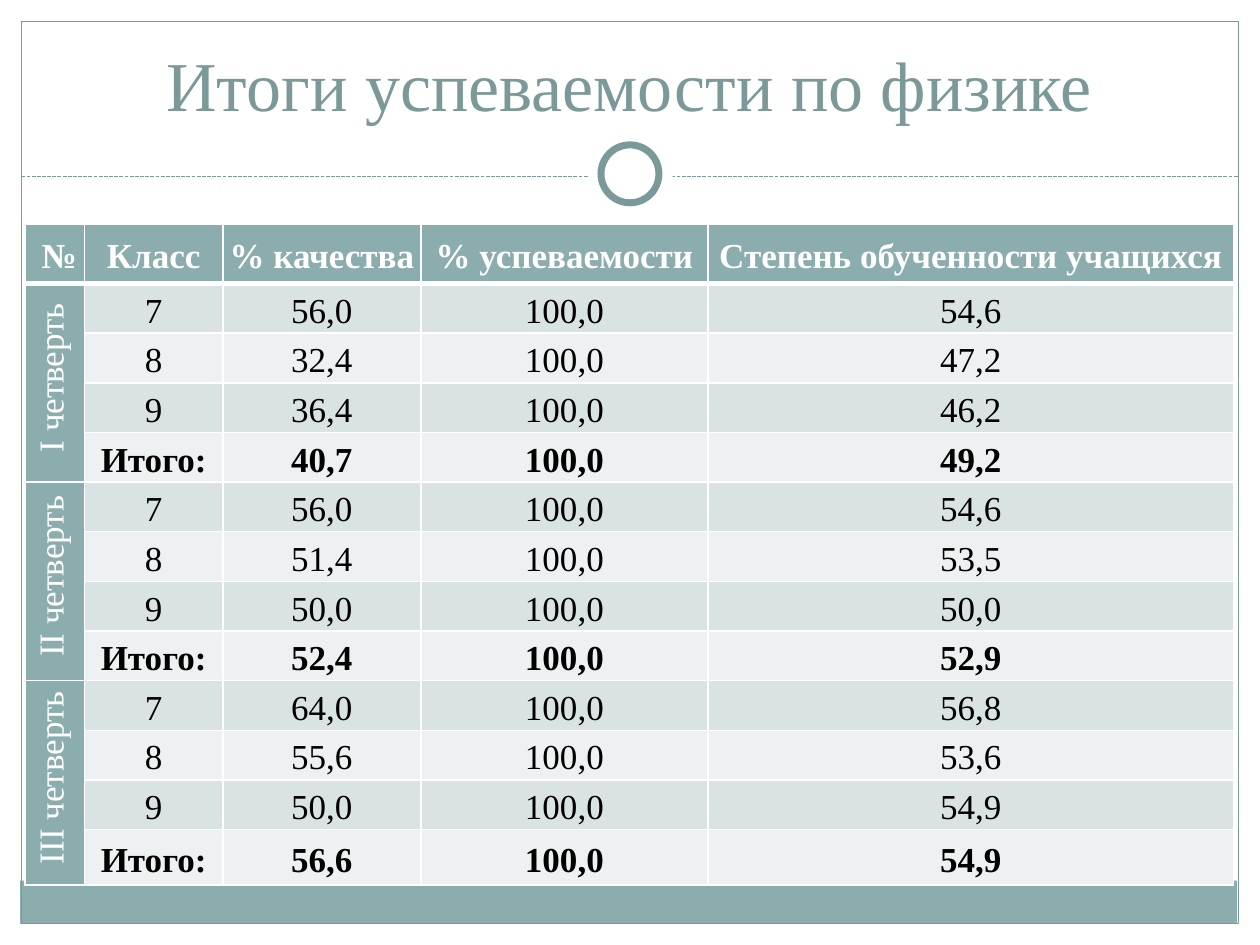
from lxml.etree import SubElement
from pptx import Presentation
from pptx.dml.color import RGBColor
from pptx.enum.dml import MSO_LINE
from pptx.enum.shapes import MSO_CONNECTOR, MSO_SHAPE
from pptx.enum.text import MSO_ANCHOR, PP_ALIGN
from pptx.oxml.ns import qn
from pptx.util import Inches, Pt

WHITE = RGBColor(0xFF, 0xFF, 0xFF)
BLACK = RGBColor(0, 0, 0)
TEAL = RGBColor(0x8C, 0xAD, 0xAE)
DARK_TEAL = RGBColor(0x7C, 0x99, 0x9A)
BANDS = [RGBColor(0xDA, 0xE3, 0xE3), RGBColor(0xEE, 0xF1, 0xF2)]
FONT = "Times New Roman"

TITLE = "Итоги успеваемости по физике"
HEADERS = ["\u00a0№", "Класс", "% качества", "% успеваемости",
           "Степень обученности учащихся"]
CLASSES = ["7", "8", "9", "Итого:"]
SUCCESS = "100,0"
# Quarter: (quality, degree of learning) for each class and the total
QUARTERS = {
    "I четверть": [("56,0", "54,6"), ("32,4", "47,2"), ("36,4", "46,2"), ("40,7", "49,2")],
    "II четверть": [("56,0", "54,6"), ("51,4", "53,5"), ("50,0", "50,0"), ("52,4", "52,9")],
    "III четверть": [("64,0", "56,8"), ("55,6", "53,6"), ("50,0", "54,9"), ("56,6", "54,9")],
}
COLUMN_WIDTHS = [0.47, 1.1, 1.57, 2.28, 4.17]
QUARTER_HEIGHTS = [0.36, 0.38, 0.38, 0.38]
ROW_HEIGHTS = [0.47] + QUARTER_HEIGHTS * len(QUARTERS)
ROW_HEIGHTS[-1] = 0.44


def add_plain_shape(slide, kind, box, fill=None, line=None, line_width=0.75):
    shape = slide.shapes.add_shape(kind, *map(Inches, box))
    shape.shadow.inherit = False
    if fill is None:
        shape.fill.background()
    else:
        shape.fill.solid()
        shape.fill.fore_color.rgb = fill
    if line is None:
        shape.line.fill.background()
    else:
        shape.line.color.rgb = line
        shape.line.width = Pt(line_width)


def add_backdrop(slide):
    rectangle, ellipse = MSO_SHAPE.RECTANGLE, MSO_SHAPE.OVAL
    add_plain_shape(slide, rectangle, (0, 0, 10, 1.52), WHITE)
    for left in (0, 9.83):
        add_plain_shape(slide, rectangle, (left, 0, 0.17, 7.5), WHITE)
    add_plain_shape(slide, rectangle, (0.16, 6.99, 9.66, 0.34), TEAL)
    add_plain_shape(slide, rectangle, (0.17, 0.17, 9.66, 7.16), line=DARK_TEAL)

    divider = slide.shapes.add_connector(
        MSO_CONNECTOR.STRAIGHT, Inches(0.17), Inches(1.4), Inches(9.83), Inches(1.4))
    divider.line.color.rgb = DARK_TEAL
    divider.line.width = Pt(0.75)
    divider.line.dash_style = MSO_LINE.SQUARE_DOT
    SubElement(divider._element.spPr, qn("a:effectLst"))

    add_plain_shape(slide, ellipse, (4.67, 1.05, 0.67, 0.67), WHITE)
    add_plain_shape(slide, ellipse, (4.77, 1.15, 0.46, 0.46), WHITE, DARK_TEAL, 4)


def write_centred(frame, text, size, color, bold=False):
    paragraph = frame.paragraphs[0]
    paragraph.text = text
    paragraph.alignment = PP_ALIGN.CENTER
    font = paragraph.runs[0].font
    font.name, font.size, font.bold = FONT, Pt(size), bold
    font.color.rgb = color
    return paragraph


def set_borders(cell, bottom_width):
    properties = cell._tc.get_or_add_tcPr()
    for side, width in zip("LRTB", (1, 1, 1, bottom_width)):
        border = SubElement(properties, qn(f"a:ln{side}"), w=str(Pt(width)))
        fill = SubElement(border, qn("a:solidFill"))
        SubElement(fill, qn("a:srgbClr"), val=str(WHITE))


def style_cell(cell, fill, margin_x, margin_y, bottom_width=1):
    set_borders(cell, bottom_width)
    cell.fill.solid()
    cell.fill.fore_color.rgb = fill
    cell.vertical_anchor = MSO_ANCHOR.MIDDLE
    cell.margin_left = cell.margin_right = Inches(margin_x)
    cell.margin_top = cell.margin_bottom = Inches(margin_y)


def write_cell(cell, text, color, bold=False):
    paragraph = write_centred(cell.text_frame, text, 20, color, bold)
    paragraph.line_spacing = 1.15
    return paragraph


def add_results(slide):
    place = [Inches(value) for value in (0.2, 1.78, 9.61, 5.59)]
    table_frame = slide.shapes.add_table(len(ROW_HEIGHTS), len(HEADERS), *place)
    table = table_frame.table
    for column, width in zip(table.columns, COLUMN_WIDTHS):
        column.width = Inches(width)
    for row, height in zip(table.rows, ROW_HEIGHTS):
        row.height = Inches(height)
    table_frame.width, table_frame.height = place[2:]

    for column, header in enumerate(HEADERS):
        margin = 0.04 if column else 0.01
        style_cell(table.cell(0, column), TEAL, margin, margin, bottom_width=3)
        write_cell(table.cell(0, column), header, WHITE, bold=True)

    for index, (quarter, results) in enumerate(QUARTERS.items()):
        first = 1 + index * len(CLASSES)
        last = first + len(CLASSES) - 1
        for offset, (grade, (quality, degree)) in enumerate(zip(CLASSES, results)):
            row = first + offset
            style_cell(table.cell(row, 0), TEAL, 0.01, 0.01)
            for column, text in enumerate((grade, quality, SUCCESS, degree), 1):
                cell = table.cell(row, column)
                style_cell(cell, BANDS[offset % 2], 0.04, 0.02)
                write_cell(cell, text, BLACK, bold=row == last)
        label = table.cell(first, 0)
        label.merge(table.cell(last, 0))
        label._tc.get_or_add_tcPr().set("vert", "vert270")
        paragraph = write_cell(label, quarter, WHITE)
        paragraph._p.get_or_add_pPr().set("marL", str(Inches(0.08)))


def add_title(slide):
    title = slide.shapes.add_textbox(Inches(0.33), Inches(0.25), Inches(9.33), Inches(0.83))
    title.text_frame.word_wrap = True
    title.text_frame.vertical_anchor = MSO_ANCHOR.MIDDLE
    write_centred(title.text_frame, TITLE, 40, DARK_TEAL)


def main():
    presentation = Presentation()
    presentation.slide_width, presentation.slide_height = Inches(10), Inches(7.5)
    slide = presentation.slides.add_slide(presentation.slide_layouts[6])
    add_backdrop(slide)
    add_results(slide)
    add_title(slide)
    presentation.save("out.pptx")


if __name__ == "__main__":
    main()
